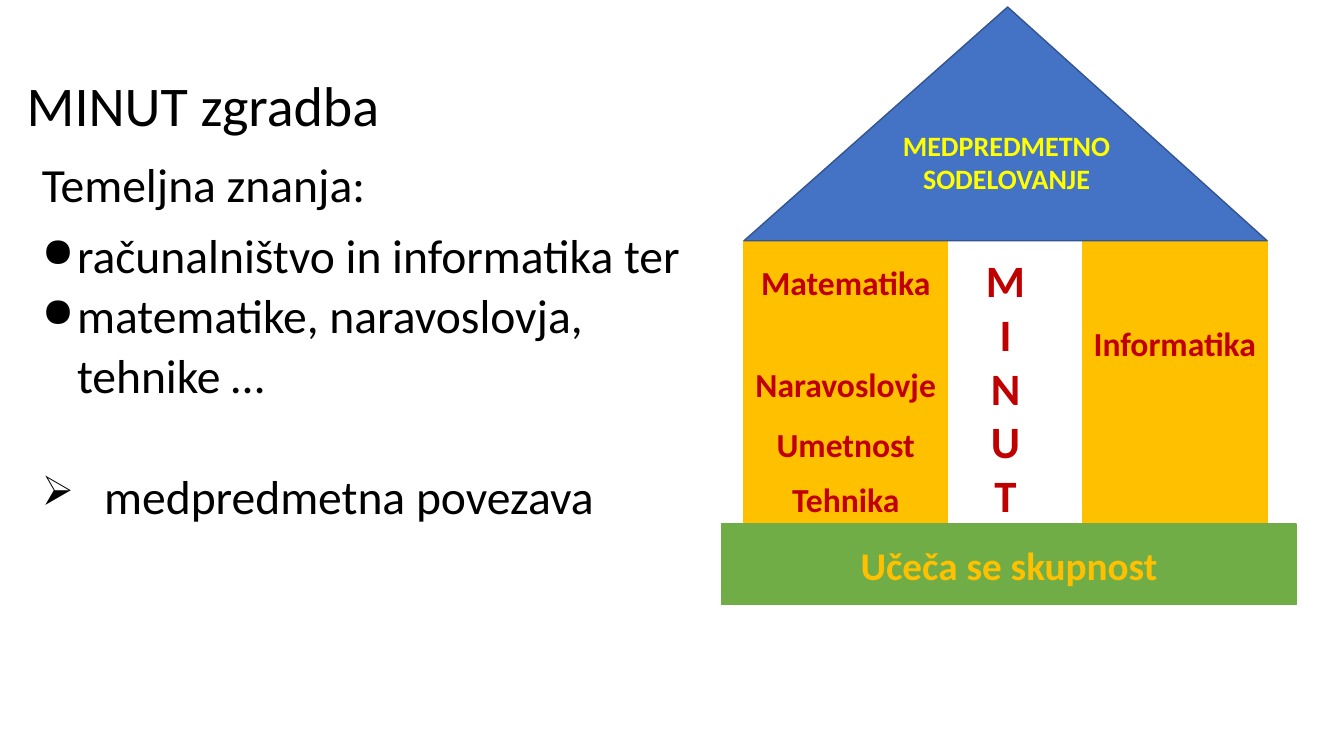
from dataclasses import dataclass

from lxml import etree
from pptx import Presentation
from pptx.dml.color import RGBColor
from pptx.enum import shapes, text
from pptx.oxml import ns
from pptx.util import Pt


@dataclass(frozen=True)
class Theme:
    font: str = "Calibri"
    ink: str = "000000"
    red: str = "C00000"
    gold: str = "FFC000"
    white: str = "FFFFFF"
    blue: str = "4472C4"
    navy: str = "325491"
    green: str = "70AD47"
    yellow: str = "FFFF00"
    title: int = 40
    body: int = 34
    mark: int = 32
    base: int = 28
    wall: int = 24
    roof: int = 20


THEME = Theme()
RECT = shapes.MSO_SHAPE.RECTANGLE
TOP, MID, LOW = (text.MSO_ANCHOR.TOP, text.MSO_ANCHOR.MIDDLE,
                 text.MSO_ANCHOR.BOTTOM)
LEFT, MIDDLE, EVEN = (text.PP_ALIGN.LEFT, text.PP_ALIGN.CENTER,
                      text.PP_ALIGN.JUSTIFY)


def style(para, size, color, bold=False):
    para.font.name = THEME.font
    para.font.size = Pt(size)
    para.font.bold = bold
    para.font.color.rgb = RGBColor.from_string(color)


def add_text(slide, box, anchor):
    frame = slide.shapes.add_textbox(*map(Pt, box)).text_frame
    frame.word_wrap = True
    frame.vertical_anchor = anchor
    return frame


def indent(para, left, hang=0, mark=None):
    """Set the left margin and, with a mark, a hanging bullet."""
    props = para._p.get_or_add_pPr()
    props.set("marL", str(Pt(left)))
    props.set("indent", str(Pt(-hang)))
    if mark:
        etree.SubElement(props, ns.qn("a:buSzPct"), val="86000")
        etree.SubElement(props, ns.qn("a:buChar"), char=mark)


def add_title(slide):
    para = add_text(slide, (12, 21.6, 935, 80.6), LOW).paragraphs[0]
    para.text = "MINUT zgradba"
    para.line_spacing = 0.9
    style(para, THEME.title, THEME.ink)


def add_body(slide):
    frame = add_text(slide, (12, 105, 509, 393), TOP)
    rows = [
        ("Temeljna znanja:", 10.8, 0, None, 0, EVEN),
        ("računalništvo in informatika ter", 36, 25.2, "●", 8, EVEN),
        ("matematike, naravoslovja, tehnike …", 36, 25.2, "●", 0, LEFT),
        ("medpredmetna povezava", 55.4, 44.6, "➢", 44, EVEN),
    ]
    for i, (words, left, hang, mark, gap, align) in enumerate(rows):
        para = frame.add_paragraph() if i else frame.paragraphs[0]
        para.text = words
        para.alignment = align
        para.line_spacing = 1.05
        para.space_before = Pt(gap)
        indent(para, left, hang, mark)
        style(para, THEME.body, THEME.ink)


def add_block(slide, box, fill, rows, size, color, kind=RECT, line=None,
              anchor=MID, top=3.6, low=3.6):
    """Add a filled shape; rows holds pairs of words and space before."""
    shape = slide.shapes.add_shape(kind, *map(Pt, box))
    shape.shadow.inherit = False
    shape.fill.solid()
    shape.fill.fore_color.rgb = RGBColor.from_string(fill)
    shape.line.color.rgb = RGBColor.from_string(line or fill)
    shape.line.width = Pt(1)
    frame = shape.text_frame
    frame.word_wrap = True
    frame.vertical_anchor = anchor
    frame.margin_left = frame.margin_right = Pt(5)
    frame.margin_top, frame.margin_bottom = Pt(top), Pt(low)
    for i, (words, gap) in enumerate(rows):
        para = frame.add_paragraph() if i else frame.paragraphs[0]
        para.text = words
        para.alignment = MIDDLE
        para.space_before = Pt(gap)
        style(para, size, color, True)
    return shape


def add_house(slide):
    t = THEME
    add_block(slide, (773.3, 172, 131.8, 202.4), t.gold, [("Informatika", 0)],
              t.wall, t.red, anchor=TOP, top=58.5)
    add_block(slide, (687, 169.2, 62.6, 214.6), t.white,
              [(letter, 0) for letter in "MINUT"], t.mark, t.red)
    fields = [("Matematika", 0), ("Naravoslovje", 44), ("Umetnost", 14),
              ("Tehnika", 11)]
    add_block(slide, (531.4, 172, 145.4, 211.7), t.gold, fields,
              t.wall, t.red, anchor=TOP, top=15)
    roof = add_block(slide, (531.4, 5, 373.7, 167), t.blue,
                     [("MEDPREDMETNO SODELOVANJE", 0)], t.roof, t.yellow,
                     shapes.MSO_SHAPE.ISOSCELES_TRIANGLE, t.navy, low=33)
    roof.adjustments[0] = 0.504
    add_block(slide, (515.5, 374.4, 410.4, 57.6), t.green,
              [("Učeča se skupnost", 0)], t.base, t.gold)


def main():
    deck = Presentation()
    deck.slide_width, deck.slide_height = Pt(960), Pt(540)
    slide = deck.slides.add_slide(deck.slide_layouts[6])
    add_title(slide)
    add_body(slide)
    add_house(slide)
    deck.save("out.pptx")


if __name__ == "__main__":
    main()
